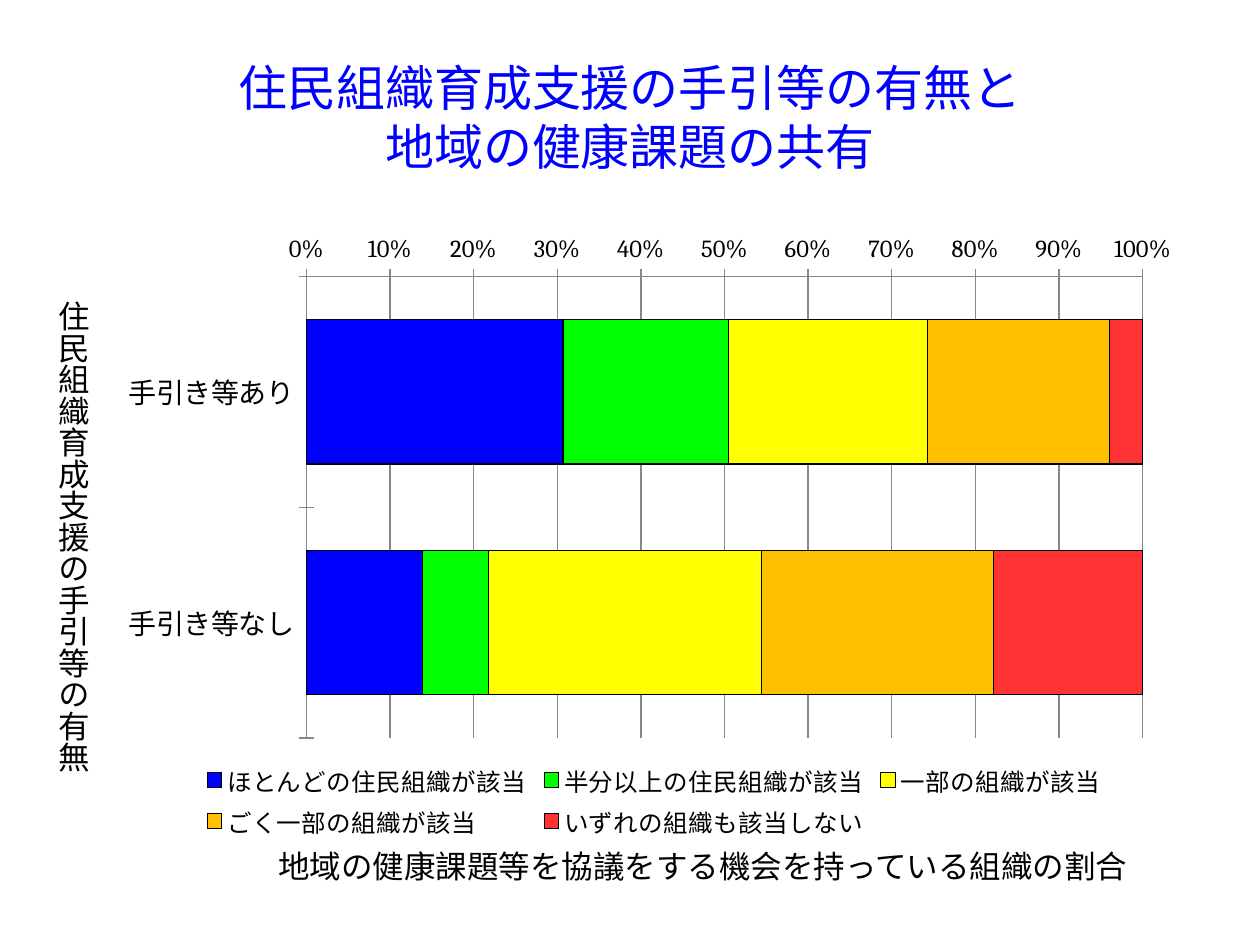
from lxml import etree
from pptx import Presentation
from pptx.chart.data import CategoryChartData
from pptx.dml.color import RGBColor
from pptx.enum.chart import XL_CHART_TYPE, XL_LEGEND_POSITION, XL_TICK_MARK
from pptx.enum.text import MSO_ANCHOR, PP_ALIGN
from pptx.oxml.ns import qn
from pptx.util import Inches, Pt

STACKED = XL_CHART_TYPE.BAR_STACKED_100
BOTTOM = XL_LEGEND_POSITION.BOTTOM
CROSS = XL_TICK_MARK.CROSS
CENTER = PP_ALIGN.CENTER
TOP, MIDDLE = MSO_ANCHOR.TOP, MSO_ANCHOR.MIDDLE

BLACK = RGBColor(0, 0, 0)
BLUE = RGBColor(0, 0, 255)
GREEN = RGBColor(0, 255, 0)
YELLOW = RGBColor(255, 255, 0)
ORANGE = RGBColor(255, 192, 0)
RED = RGBColor(255, 51, 51)
GRAY = RGBColor(135, 135, 135)

GROUPS = ["手引き等あり", "手引き等なし"]
SHARES = [
    ("ほとんどの住民組織が該当", (31, 14), BLUE),
    ("半分以上の住民組織が該当", (20, 8), GREEN),
    ("一部の組織が該当", (24, 33), YELLOW),
    ("ごく一部の組織が該当", (22, 28), ORANGE),
    ("いずれの組織も該当しない", (4, 18), RED),
]


def add_text(slide, text, box, size, color=BLACK, align=None, anchor=TOP, wrap=True):
    shape = slide.shapes.add_textbox(*map(Inches, box))
    frame = shape.text_frame
    frame.word_wrap = wrap
    frame.vertical_anchor = anchor
    frame.text = text
    for para in frame.paragraphs:
        para.alignment = align
        for run in para.runs:
            run.font.size = Pt(size)
            run.font.name = "Calibri"
            run.font.color.rgb = color
    return shape


def set_font(font, size, name="Calibri"):
    font.size = Pt(size)
    font.name = name
    font.color.rgb = BLACK


def set_layout(part, index, box, inner=False):
    """Place a chart part by fractions of the chart area."""
    for old in part.findall(qn("c:layout")):
        part.remove(old)
    layout = etree.Element(qn("c:layout"))
    manual = etree.SubElement(layout, qn("c:manualLayout"))
    items = [("layoutTarget", "inner")] if inner else []
    items += [("xMode", "edge"), ("yMode", "edge")]
    items += zip("xywh", map(str, box))
    for tag, val in items:
        etree.SubElement(manual, qn("c:" + tag)).set("val", val)
    part.insert(index, layout)


def style_axis(axis, size, name="Calibri"):
    axis.major_tick_mark = CROSS
    axis.format.line.color.rgb = GRAY
    set_font(axis.tick_labels.font, size, name)


def add_bars(slide, box):
    data = CategoryChartData()
    data.categories = GROUPS
    for name, vals, _ in SHARES:
        data.add_series(name, vals)
    chart = slide.shapes.add_chart(STACKED, *map(Inches, box), data).chart
    chart.has_title = False
    set_font(chart.font, 12)

    # Bars
    plot = chart.plots[0]
    plot.gap_width = 60
    plot.overlap = 100
    plot.vary_by_categories = False
    for bar, (_, _, color) in zip(plot.series, SHARES):
        bar.format.fill.solid()
        bar.format.fill.fore_color.rgb = color
        bar.format.line.color.rgb = BLACK
        bar.format.line.width = Pt(0.75)

    # Axes
    style_axis(chart.category_axis, 16)
    chart.category_axis.reverse_order = True
    scale = chart.value_axis
    style_axis(scale, 14, "Cambria")
    scale.maximum_scale = 1
    scale.major_unit = 0.1
    scale.major_gridlines.format.line.color.rgb = GRAY
    scale.tick_labels.number_format = "0%"
    scale.tick_labels.number_format_is_linked = False

    # Legend
    chart.has_legend = True
    legend = chart.legend
    legend.position = BOTTOM
    legend.include_in_layout = False
    set_font(legend.font, 14)

    # Placement inside the chart
    root = chart.element
    set_layout(root.find(".//" + qn("c:plotArea")), 0, (0.18, 0.09, 0.77, 0.74), True)
    set_layout(root.find(".//" + qn("c:legend")), 1, (0.08, 0.86, 0.84, 0.14))


def main():
    deck = Presentation()
    deck.slide_width, deck.slide_height = Inches(10), Inches(7.5)
    slide = deck.slides.add_slide(deck.slide_layouts[6])

    # Title
    add_text(slide, "住民組織育成支援の手引等の有無と\v地域の健康課題の共有",
             (0.5, 0.3, 9, 1.25), 28, BLUE, CENTER, MIDDLE)

    # Chart
    add_bars(slide, (0.88, 1.75, 8.62, 4.95))

    # Axis captions
    side = add_text(slide, "住民組織育成支援の手引等の有無",
                    (0.28, 2.29, 0.5, 3.84), 18, wrap=False)
    side.text_frame._txBody.bodyPr.set("vert", "eaVert")
    add_text(slide, "地域の健康課題等を協議をする機会を持っている組織の割合",
             (2.11, 6.67, 6.96, 0.4), 18)

    deck.save("out.pptx")


if __name__ == "__main__":
    main()
